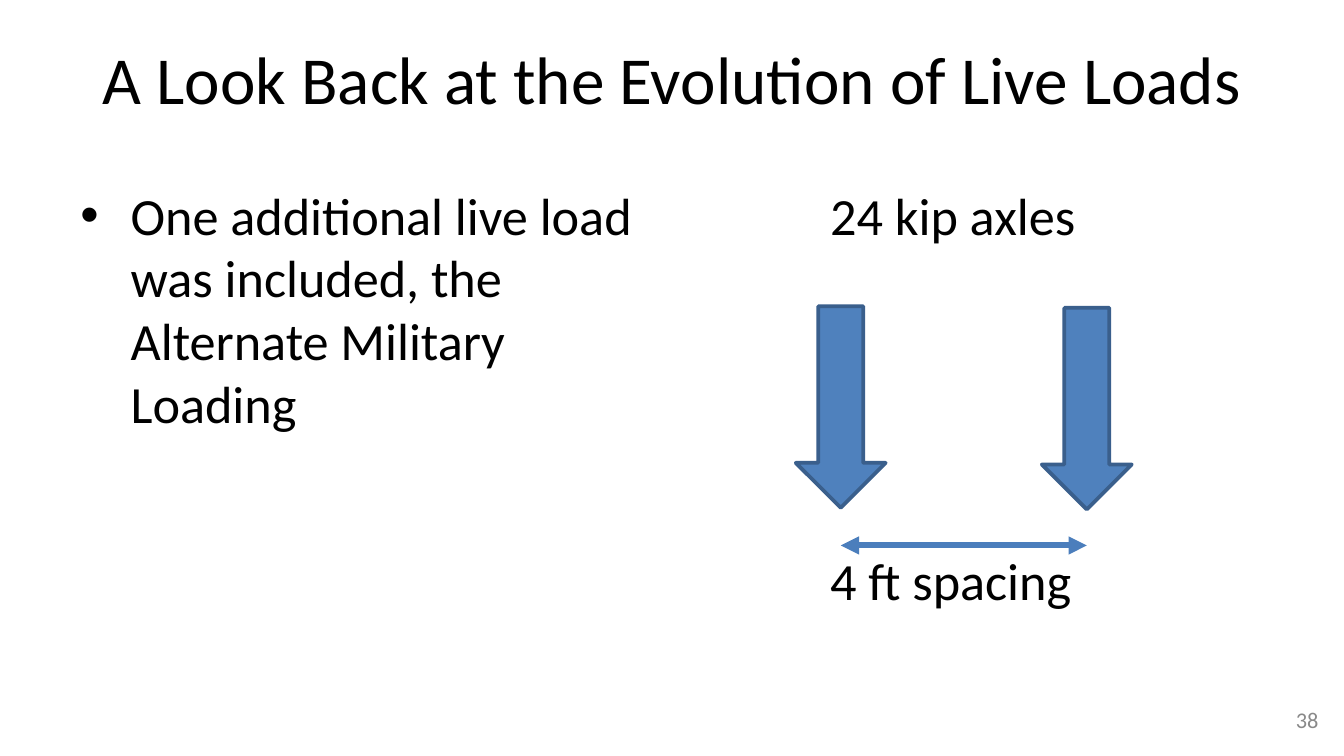
from lxml.etree import SubElement
from pptx import Presentation
from pptx.dml.color import RGBColor
from pptx.enum.shapes import MSO_CONNECTOR, MSO_SHAPE
from pptx.enum.text import MSO_ANCHOR, PP_ALIGN
from pptx.oxml.ns import qn
from pptx.util import Cm, Pt

COLORS = {"text": "000000", "number": "898989", "arrow": "4F81BD",
          "outline": "3A5F8C", "spacing": "4B7EBC"}
FORMATS = {
    "title": {"size": Pt(36), "name": "Calibri"},
    "body": {"size": Pt(28), "name": "Calibri"},
    "number": {"size": Pt(12), "name": "Calibri"},
}


def color(key):
    return RGBColor.from_string(COLORS[key])


def add_text(page, box, lines, style, ink="text", align=PP_ALIGN.LEFT,
             anchor=MSO_ANCHOR.TOP, gap=0):
    """Place lines in a box, with a gap in points between them."""
    frame = page.shapes.add_textbox(*map(Cm, box)).text_frame
    frame.word_wrap = True
    frame.vertical_anchor = anchor
    for index, line in enumerate(lines):
        para = frame.paragraphs[0] if index == 0 else frame.add_paragraph()
        para.alignment = align
        if index:
            para.space_before = Pt(gap)
        span = para.add_run()
        span.text = line
        for name, value in FORMATS[style].items():
            setattr(span.font, name, value)
        span.font.color.rgb = color(ink)
    return frame


def indent(para, left, first=0, bullet=None):
    properties = para._p.get_or_add_pPr()
    properties.set("marL", str(Cm(left)))
    properties.set("indent", str(Cm(first)))
    if bullet:
        SubElement(properties, qn("a:buFont"), typeface="Arial")
        SubElement(properties, qn("a:buChar"), char=bullet)


def add_bullet_column(page, box):
    frame = add_text(page, box, ["One additional live load was included, "
                                 "the Alternate Military Loading"], "body")
    indent(frame.paragraphs[0], 0.95, -0.95, "•")


def add_axle_arrow(page, box):
    arrow = page.shapes.add_shape(MSO_SHAPE.DOWN_ARROW, *map(Cm, box))
    arrow.shadow.inherit = False
    arrow.fill.solid()
    arrow.fill.fore_color.rgb = color("arrow")
    arrow.line.color.rgb = color("outline")
    arrow.line.width = Pt(2)


def add_spacing_line(page, start, end, level):
    line = page.shapes.add_connector(
        MSO_CONNECTOR.STRAIGHT, Cm(start), Cm(level), Cm(end), Cm(level))
    line.line.color.rgb = color("spacing")
    line.line.width = Pt(3.25)
    for tag in ("a:headEnd", "a:tailEnd"):
        SubElement(line.line._get_or_add_ln(), qn(tag), type="triangle")
    SubElement(line._element.spPr, qn("a:effectLst"))


def add_axle_diagram(page, box):
    left, top, _, _ = box
    frame = add_text(page, box, ["24 kip axles", "4 ft spacing"], "body", gap=162)
    for para in frame.paragraphs:
        indent(para, 2.54)

    # Two axle loads, with the spacing measured between their centres
    width, height = 1.7, 3.81
    first, second = left + 2.14, left + 6.79
    add_axle_arrow(page, (first, top + 2.46, width, height))
    add_axle_arrow(page, (second, top + 2.49, width, height))
    add_spacing_line(page, first + width / 2, second + width / 2, top + 6.98)


def main():
    deck = Presentation()
    deck.slide_width, deck.slide_height = Cm(25.4), Cm(14.29)
    page = deck.slides.add_slide(deck.slide_layouts[6])

    # Title
    add_text(page, (1.27, 0.58, 22.86, 2.39),
             ["A Look Back at the Evolution of Live Loads"], "title",
             align=PP_ALIGN.CENTER)

    # Two equal columns
    add_bullet_column(page, (1.27, 3.33, 11.23, 9.42))
    add_axle_diagram(page, (12.9, 3.33, 11.23, 9.42))

    # Page number
    add_text(page, (19.25, 13.23, 5.92, 0.76), ["38"], "number", "number",
             PP_ALIGN.RIGHT, MSO_ANCHOR.MIDDLE)
    deck.save("out.pptx")


if __name__ == "__main__":
    main()
